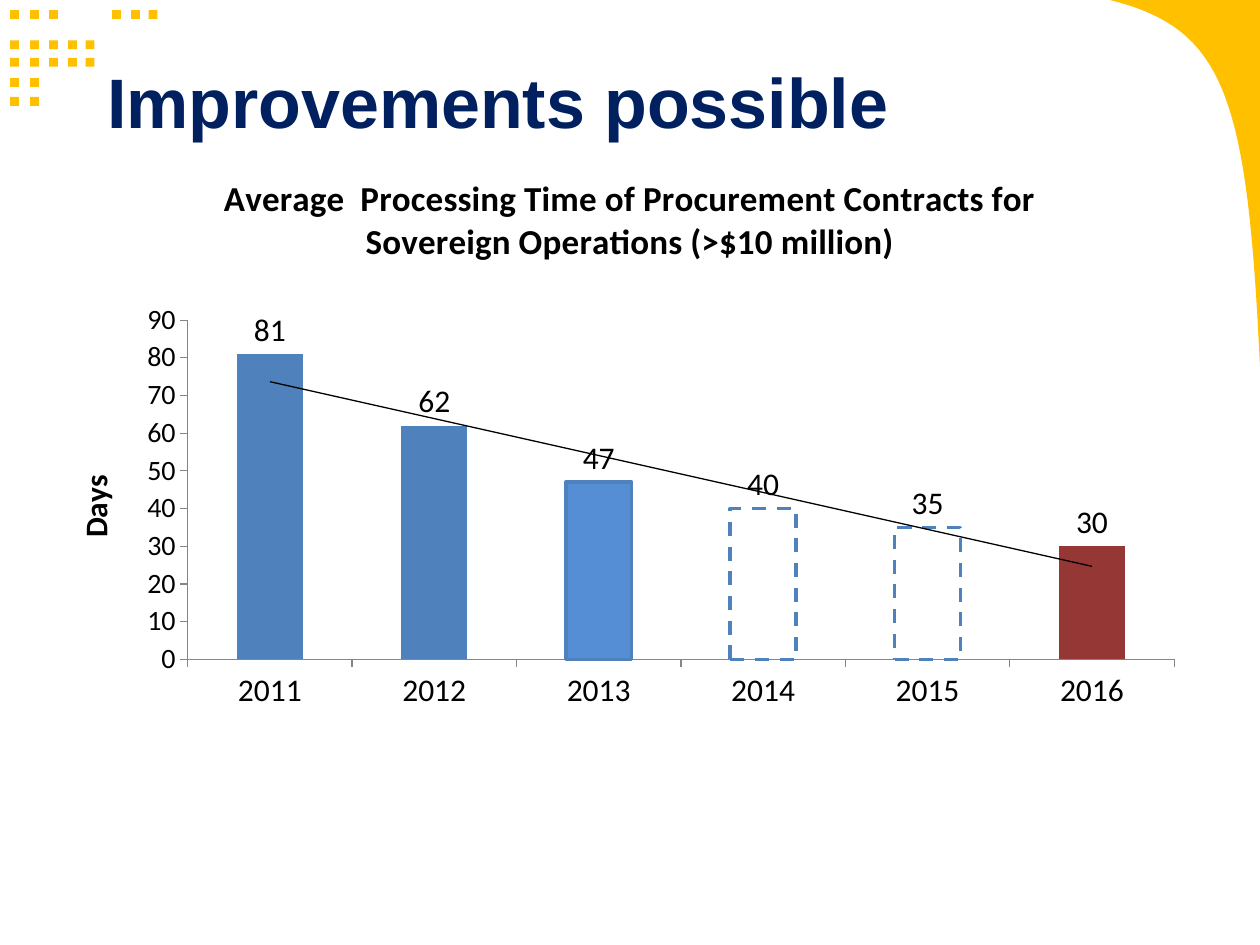
from dataclasses import dataclass

from lxml.etree import SubElement
from pptx import Presentation
from pptx.chart.data import CategoryChartData
from pptx.dml.color import RGBColor
from pptx.enum.chart import XL_CHART_TYPE, XL_LABEL_POSITION, XL_TICK_MARK
from pptx.enum.dml import MSO_LINE
from pptx.enum.shapes import MSO_SHAPE
from pptx.enum.text import MSO_ANCHOR, PP_ALIGN
from pptx.oxml import parse_xml
from pptx.oxml.ns import nsdecls, qn
from pptx.util import Inches, Pt


@dataclass(frozen=True)
class Theme:
    gold: RGBColor = RGBColor(0xFF, 0xC0, 0x00)
    navy: RGBColor = RGBColor(0x00, 0x20, 0x60)
    black: RGBColor = RGBColor(0x00, 0x00, 0x00)
    gray: RGBColor = RGBColor(0x86, 0x86, 0x86)
    blue: RGBColor = RGBColor(0x4F, 0x81, 0xBD)
    light: RGBColor = RGBColor(0x55, 0x8E, 0xD5)
    red: RGBColor = RGBColor(0x95, 0x37, 0x35)
    head: Pt = Pt(40)
    title: Pt = Pt(20)
    label: Pt = Pt(18)
    tick: Pt = Pt(16)


theme = Theme()


def paint(shape):
    """Make a corner ornament plain gold, without line or shadow."""
    shape.shadow.inherit = False
    shape.fill.solid()
    shape.fill.fore_color.rgb = theme.gold
    shape.line.fill.background()


def style(font, size, color=theme.black, bold=False, name="Calibri"):
    font.size, font.bold, font.name = size, bold, name
    font.color.rgb = color


deck = Presentation()
deck.slide_width, deck.slide_height = Inches(10), Inches(7.5)
slide = deck.slides.add_slide(deck.slide_layouts[5])

# Corner squares: one pattern per row, x marks a filled column
lefts = [0.08, 0.24, 0.39, 0.54, 0.68, 0.89, 1.04, 1.18]
rows = {
    0.08: "xxx..xxx",
    0.32: "xxxxx...",
    0.46: "xxxxx...",
    0.62: "xx......",
    0.77: "xx......",
}
side = Inches(0.07)
for top, marks in rows.items():
    for left, mark in zip(lefts, marks):
        if mark == "x":
            paint(slide.shapes.add_shape(
                MSO_SHAPE.RECTANGLE, Inches(left), Inches(top), side, side))

# Corner swoosh: a cubic Bezier curve from the right edge to the top edge
start, pull, push, end = (10, 2.91), (9.9, 0.75), (9.72, 0.23), (8.81, 0)
steps = 32
curve = []
for step in range(steps + 1):
    t = step / steps
    u = 1 - t
    curve.append([
        Inches(u**3 * a + 3 * u**2 * t * b + 3 * u * t**2 * c + t**3 * d)
        for a, b, c, d in zip(start, pull, push, end)])
corner = (Inches(10), Inches(0))
pen = slide.shapes.build_freeform(*corner)
pen.add_line_segments(curve, close=True)
paint(pen.convert_to_shape())

# Slide title
title = slide.shapes.title
title.left, title.top = Inches(0.75), Inches(0.42)
title.width, title.height = Inches(8.75), Inches(0.83)
frame = title.text_frame
frame.text = "Improvements possible"
frame.vertical_anchor = MSO_ANCHOR.MIDDLE
frame.margin_bottom = Inches(0.13)
line = frame.paragraphs[0]
line.alignment = PP_ALIGN.LEFT
style(line.runs[0].font, theme.head, theme.navy, True, "Arial")

# Column chart
times = {"2011": 81, "2012": 62, "2013": 47, "2014": 40, "2015": 35, "2016": 30}
data = CategoryChartData()
data.categories = list(times)
data.add_series("Series 1", list(times.values()))
chart = slide.shapes.add_chart(
    XL_CHART_TYPE.COLUMN_CLUSTERED, Inches(0.5), Inches(1.17),
    Inches(9), Inches(5.08), data).chart
style(chart.font, theme.label)
chart.has_legend = False

# Axes
years, days = chart.category_axis, chart.value_axis
days.has_major_gridlines = False
days.minimum_scale, days.maximum_scale, days.major_unit = 0, 90, 10
for axis, size in ((years, theme.label), (days, theme.tick)):
    axis.major_tick_mark = XL_TICK_MARK.OUTSIDE
    axis.minor_tick_mark = XL_TICK_MARK.NONE
    axis.format.line.color.rgb = theme.gray
    style(axis.tick_labels.font, size)

# Chart title and axis title
heading = ("Average  Processing Time of Procurement Contracts for "
           "Sovereign Operations (>$10 million)")
for owner, text, size in (
        (chart.chart_title, heading, theme.title),
        (days.axis_title, "Days", theme.label)):
    owner.text_frame.text = text
    style(owner.text_frame.paragraphs[0].runs[0].font, size, bold=True)

# Bars: blue by default, with some years set apart
plot = chart.plots[0]
plot.gap_width = 150
plot.vary_by_categories = False
bars = plot.series[0]
bars.format.fill.solid()
bars.format.fill.fore_color.rgb = theme.blue

fills = {"2013": theme.light, "2016": theme.red}
borders = {"2013": MSO_LINE.SOLID, "2014": MSO_LINE.DASH, "2015": MSO_LINE.DASH}
for index, year in enumerate(times):
    if year in fills:
        fill = bars.points[index].format.fill
        fill.solid()
        fill.fore_color.rgb = fills[year]
    elif year in borders:
        bars.points[index].format.fill.background()
    if year in borders:
        border = bars.points[index].format.line
        border.color.rgb = theme.blue
        border.width = Pt(2)
        border.dash_style = borders[year]

labels = bars.data_labels
labels.show_value = True
labels.position = XL_LABEL_POSITION.OUTSIDE_END
style(labels.font, theme.label)

# Linear trend line, which the schema places before the categories
root = chart.element
trend = parse_xml(
    f'<c:trendline {nsdecls("c", "a")}><c:spPr><a:ln w="{Pt(0.75)}"><a:solidFill>'
    f'<a:srgbClr val="{theme.black}"/></a:solidFill></a:ln></c:spPr>'
    '<c:trendlineType val="linear"/><c:dispRSqr val="0"/>'
    '<c:dispEq val="0"/></c:trendline>')
root.find(".//" + qn("c:cat")).addprevious(trend)

# Inner plot area, as shares of the chart
area = root.find(".//" + qn("c:plotArea"))
for old in area.findall(qn("c:layout")):
    area.remove(old)
layout = parse_xml(f'<c:layout {nsdecls("c")}><c:manualLayout/></c:layout>')
place = {"layoutTarget": "inner", "xMode": "edge", "yMode": "edge",
         "x": 0.11, "y": 0.27, "w": 0.87, "h": 0.53}
for tag, value in place.items():
    SubElement(layout[0], qn("c:" + tag)).set("val", str(value))
area.insert(0, layout)

deck.save("out.pptx")
